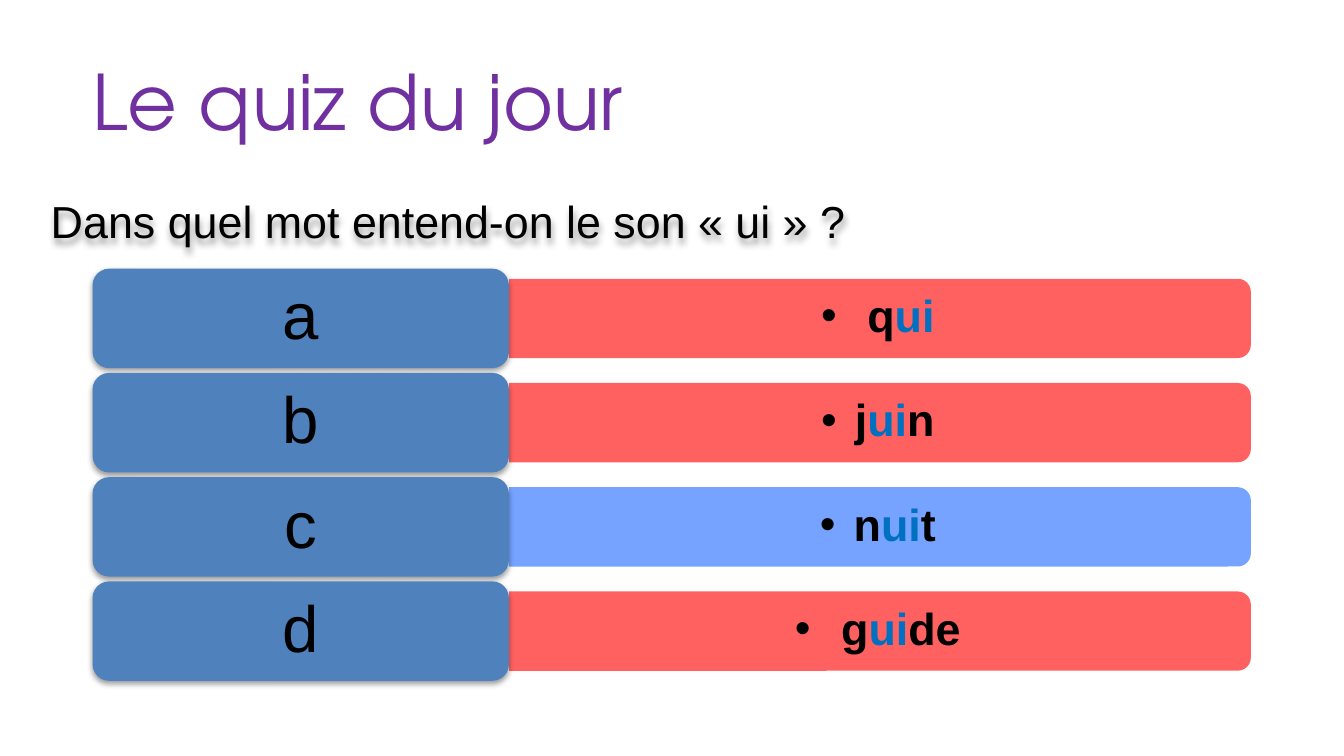
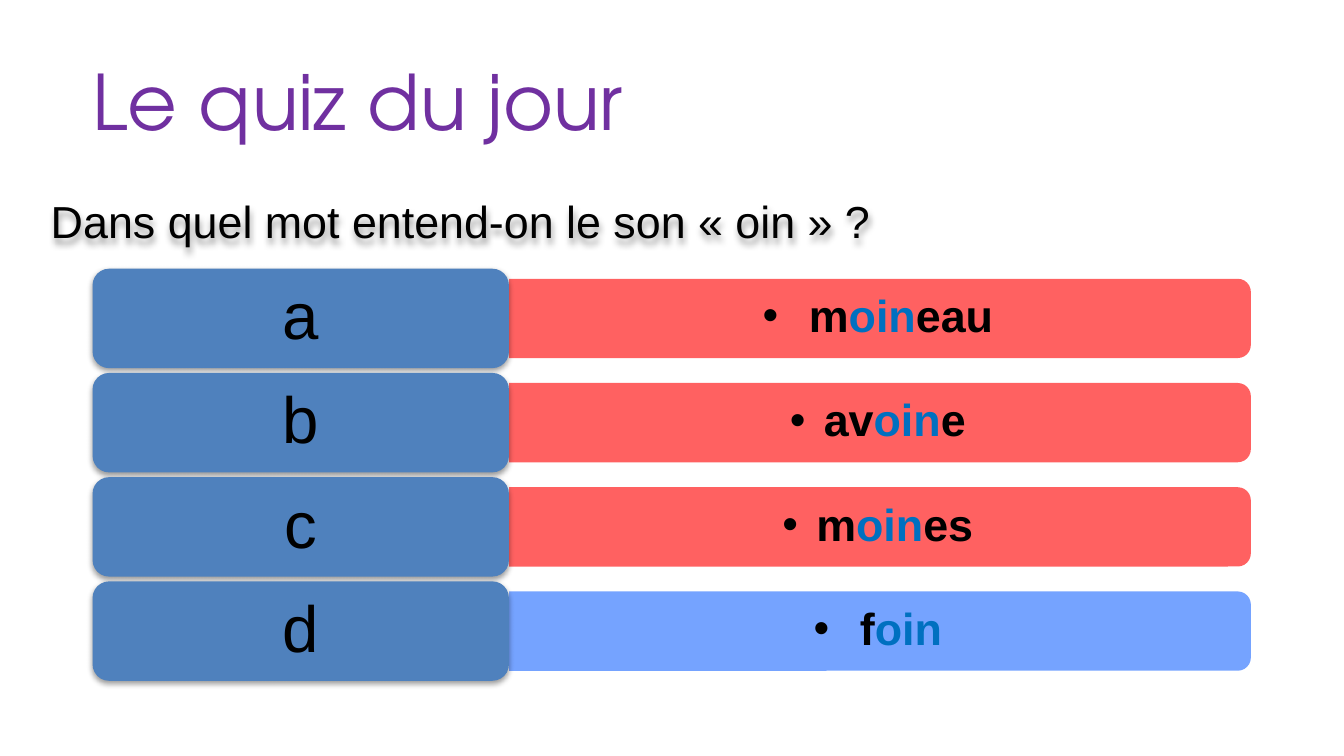
from lxml.etree import SubElement
from pptx import Presentation
from pptx.dml.color import RGBColor
from pptx.enum.shapes import MSO_SHAPE as Preset
from pptx.enum.text import MSO_ANCHOR as Anchor, MSO_AUTO_SIZE as AutoSize, PP_ALIGN as Align
from pptx.oxml.ns import qn
from pptx.util import Cm, Pt

# Shared style
PURPLE, BLACK, HIGHLIGHT = "7030A0", "000000", "0070C0"
LABEL_BLUE, WRONG_RED, RIGHT_BLUE = "4F81BD", "FF5050", "6699FF"
TITLE_FONT, BODY_FONT = "TeX Gyre Adventor", "Arial"

# Answer grid, in centimetres
LABEL_LEFT, LABEL_WIDTH, LABEL_HEIGHT = 1.75, 7.87, 1.88
BAR_LEFT, BAR_LENGTH, BAR_HEIGHT = 9.62, 14.02, 1.5
FIRST_CENTRE, ROW_PITCH = 6.02, 1.97

# Sound, words, letter of the right answer
QUIZZES = [
    ("ui", [" qui", "juin", "nuit", " guide"], "c"),
    ("oin", [" moineau", "avoine", "moines", " foin"], "d"),
]


def colour(code):
    return RGBColor.from_string(code)


class QuizDeck:
    def __init__(self):
        self.deck = Presentation()
        self.deck.slide_width, self.deck.slide_height = Cm(25.4), Cm(14.29)
        self.slide = None

    def new_slide(self):
        self.slide = self.deck.slides.add_slide(self.deck.slide_layouts[6])

    def shadow(self, item, blur, distance, opacity):
        item.shadow.inherit = False
        effects = item.element.spPr.find(qn("a:effectLst"))
        outer = SubElement(effects, qn("a:outerShdw"), blurRad=str(Pt(blur)),
                           dist=str(Pt(distance)), dir="5400000", rotWithShape="0")
        tint = SubElement(outer, qn("a:srgbClr"), val=BLACK)
        SubElement(tint, qn("a:alpha"), val=str(opacity * 1000))

    def block(self, preset, left, top, width, height, fill, opacity=100):
        block = self.slide.shapes.add_shape(preset, Cm(left), Cm(top), Cm(width), Cm(height))
        block.shadow.inherit = False
        block.fill.solid()
        block.fill.fore_color.rgb = colour(fill)
        block.line.fill.background()
        if opacity < 100:
            tint = block.element.spPr.find(qn("a:solidFill"))[0]
            SubElement(tint, qn("a:alpha"), val=str(opacity * 1000))
        return block

    def text(self, parts, left, top, width, height, size, font=BODY_FONT, bold=False,
             insets=(0, 0), anchor=Anchor.MIDDLE, align=Align.LEFT, spacing=1.0, bullet=False):
        """Write one paragraph from (wording, colour) parts."""
        box = self.slide.shapes.add_textbox(Cm(left), Cm(top), Cm(width), Cm(height))
        frame = box.text_frame
        frame.word_wrap = True
        frame.vertical_anchor = anchor
        frame.margin_left = frame.margin_right = Cm(insets[0])
        frame.margin_top = frame.margin_bottom = Cm(insets[1])
        line = frame.paragraphs[0]
        line.alignment, line.line_spacing = align, spacing
        if bullet:
            self.bullet(line)
        line.font.name, line.font.size, line.font.bold = font, Pt(size), bold
        for wording, code in parts:
            if wording:
                run = line.add_run()
                run.text = wording
                run.font.color.rgb = colour(code)
        return box

    def bullet(self, line):
        line.level = 1
        layout = line._p.get_or_add_pPr()
        layout.set("marL", str(Cm(0.64)))
        layout.set("indent", str(Cm(-0.64)))
        SubElement(layout, qn("a:buFont"), typeface=BODY_FONT)
        SubElement(layout, qn("a:buChar"), char="•")

    def title(self, wording):
        self.text([(wording, PURPLE)], 1.75, 0.51, 21.9, 2.74, 41, TITLE_FONT)

    def question(self, sound):
        question = self.text([(f"Dans quel mot entend-on le son « {sound} » ?", BLACK)],
                             0.71, 3.53, 22.78, 1.27, 24, insets=(0.25, 0.13), anchor=Anchor.TOP)
        question.text_frame.auto_size = AutoSize.SHAPE_TO_FIT_TEXT
        self.shadow(question, 4, 3, 40)

    def answer(self, centre, letter, word, sound, fill):
        # Bar drawn upright, then turned so its round corners face right
        bar = self.block(Preset.ROUND_2_SAME_RECTANGLE,
                         BAR_LEFT + (BAR_LENGTH - BAR_HEIGHT) / 2, centre - BAR_LENGTH / 2,
                         BAR_HEIGHT, BAR_LENGTH, fill, opacity=90)
        bar.rotation = 90
        before, heard, after = word.partition(sound)
        self.text([(before, BLACK), (heard, HIGHLIGHT), (after, BLACK)],
                  BAR_LEFT, centre - 0.68, 13.94, 1.35, 24, bold=True, insets=(0.69, 0.36),
                  align=Align.CENTER, spacing=0.9, bullet=True)
        # Letter label
        label = self.block(Preset.ROUNDED_RECTANGLE, LABEL_LEFT, centre - LABEL_HEIGHT / 2,
                           LABEL_WIDTH, LABEL_HEIGHT, LABEL_BLUE)
        self.shadow(label, 3.1, 1.6, 38)
        self.text([(letter, BLACK)], LABEL_LEFT + 0.09, centre - 0.85, LABEL_WIDTH - 0.18, 1.7,
                  35, insets=(0.38, 0.18), align=Align.CENTER, spacing=0.9)


def main():
    quiz = QuizDeck()
    for sound, words, right_letter in QUIZZES:
        quiz.new_slide()
        quiz.title("Le quiz du jour")
        for row, (letter, word) in enumerate(zip("abcd", words)):
            fill = RIGHT_BLUE if letter == right_letter else WRONG_RED
            quiz.answer(FIRST_CENTRE + row * ROW_PITCH, letter, word, sound, fill)
        quiz.question(sound)
    quiz.deck.save("out.pptx")


if __name__ == "__main__":
    main()
